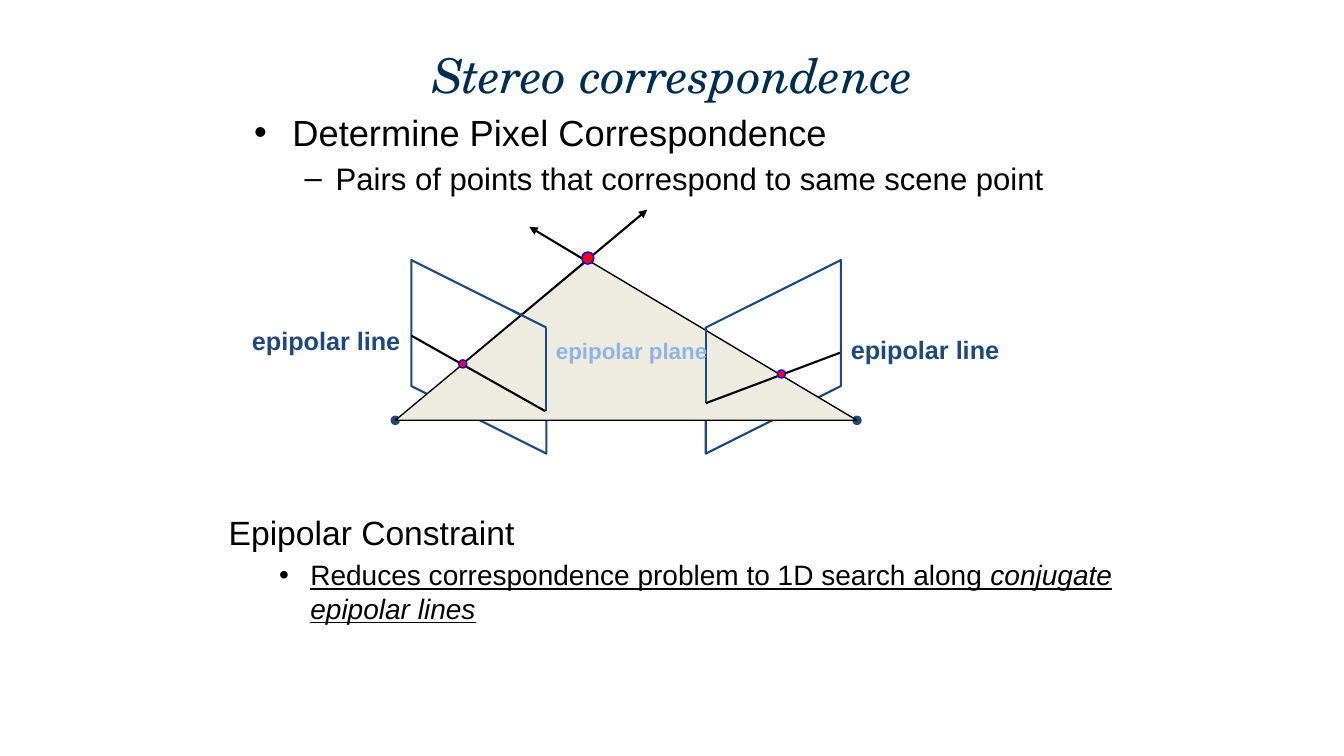
from lxml import etree
from pptx import Presentation
from pptx.dml.color import RGBColor
from pptx.enum.shapes import MSO_CONNECTOR, MSO_SHAPE
from pptx.enum.text import MSO_ANCHOR, MSO_AUTO_SIZE, PP_ALIGN
from pptx.oxml.ns import qn
from pptx.util import Inches, Pt

COLORS = {
    "title": "002D50", "ink": "000000", "navy": "1F497D", "sand": "EEECE1",
    "sky": "8EB4E3", "red": "FF0000", "blue": "0000FF",
}


def rgb(name):
    return RGBColor.from_string(COLORS[name])


class StereoSlide:
    body_font = "Arial"
    title_font = "TeX Gyre Schola"

    def __init__(self, slide):
        self.slide = slide
        self.shapes = slide.shapes

    def place(self, shape, left, top, width, height):
        shape.left, shape.top = Inches(left), Inches(top)
        shape.width, shape.height = Inches(width), Inches(height)

    def style_font(self, font, size, color, name=body_font):
        font.name, font.size = name, Pt(size)
        font.color.rgb = rgb(color)

    def title(self, text, box):
        heading = self.shapes.title
        self.place(heading, *box)
        frame = heading.text_frame
        frame.text = text
        frame.auto_size = MSO_AUTO_SIZE.NONE
        frame.vertical_anchor = MSO_ANCHOR.MIDDLE
        line = frame.paragraphs[0]
        line.alignment = PP_ALIGN.CENTER
        font = line.runs[0].font
        self.style_font(font, 34.2, "title", self.title_font)
        font.italic = True

    def outline(self, holder, box, items):
        """Fill holder with two levels of (text, size, bullet) items."""
        self.place(holder, *box)
        frame = holder.text_frame
        frame.word_wrap = True
        frame.auto_size = MSO_AUTO_SIZE.NONE
        frame.text = "\n".join(text for text, _, _ in items)
        indents = [(0.38, -0.38), (0.81, -0.31)]
        for level, (line, (_, size, bullet)) in enumerate(zip(frame.paragraphs, items)):
            line.level = level
            line.space_before = Pt(round(0.2 * size, 1) if level else 0)
            margin, hanging = indents[level]
            props = line._p.get_or_add_pPr()
            props.set("marL", str(Inches(margin)))
            props.set("indent", str(Inches(hanging)))
            if bullet:
                etree.SubElement(props, qn("a:buFont")).set("typeface", self.body_font)
                etree.SubElement(props, qn("a:buChar")).set("char", bullet)
            else:
                etree.SubElement(props, qn("a:buNone"))
            self.style_font(line.runs[0].font, size, "ink")
        return frame.paragraphs

    def text_box(self):
        return self.shapes.add_textbox(0, 0, 0, 0)

    def label(self, text, box, size, color):
        caption = self.text_box()
        self.place(caption, *box)
        frame = caption.text_frame
        frame.text = text
        frame.word_wrap = False
        frame.vertical_anchor = MSO_ANCHOR.MIDDLE
        line = frame.paragraphs[0]
        line.alignment = PP_ALIGN.CENTER
        font = line.runs[0].font
        self.style_font(font, size, color)
        font.bold = True

    def paint(self, shape, fill, line, width):
        shape.shadow.inherit = False
        if fill:
            shape.fill.solid()
            shape.fill.fore_color.rgb = rgb(fill)
        else:
            shape.fill.background()
        shape.line.color.rgb = rgb(line)
        shape.line.width = Pt(width)

    def polygon(self, corners, line, width, fill=None):
        points = [(Inches(x), Inches(y)) for x, y in corners]
        builder = self.shapes.build_freeform(*points[0])
        builder.add_line_segments(points[1:], close=True)
        self.paint(builder.convert_to_shape(), fill, line, width)

    def dot(self, center, size, fill, line):
        x, y = center
        spot = self.shapes.add_shape(
            MSO_SHAPE.OVAL, Inches(x - size / 2), Inches(y - size / 2),
            Inches(size), Inches(size))
        self.paint(spot, fill, line, 1)

    def line(self, start, end, color="ink", arrow=False):
        ray = self.shapes.add_connector(
            MSO_CONNECTOR.STRAIGHT, *(Inches(v) for v in (*start, *end)))
        ray.line.color.rgb = rgb(color)
        ray.line.width = Pt(1.5)
        if arrow:
            etree.SubElement(ray.line._ln, qn("a:tailEnd")).set("type", "triangle")
        etree.SubElement(ray._element.spPr, qn("a:effectLst"))


def main():
    deck = Presentation()
    deck.slide_width, deck.slide_height = Inches(13.33), Inches(7.5)
    stereo = StereoSlide(deck.slides.add_slide(deck.slide_layouts[1]))

    stereo.title("Stereo correspondence", (0.67, 0.38, 12, 0.72))
    stereo.outline(stereo.slide.placeholders[1], (2.42, 1.04, 8.5, 1.15), [
        ("Determine Pixel Correspondence", 25.9, "•"),
        ("Pairs of points that correspond to same scene point", 22.2, "–"),
    ])

    scene_point = (5.83, 2.58)
    left_camera, right_camera = (3.92, 4.17), (8.5, 4.17)
    left_plane = [(4.08, 2.58), (4.08, 3.83), (5.42, 4.5), (5.42, 3.25)]
    right_plane = [(12.42 - x, y) for x, y in left_plane]

    stereo.line((7.75, 3.75), (5.25, 2.25), arrow=True)
    for plane in (left_plane, right_plane):
        stereo.polygon(plane, "navy", 1.5)
    stereo.line((4.58, 3.62), (6.42, 2.08), arrow=True)
    for camera in (left_camera, right_camera):
        stereo.dot(camera, 0.08, "navy", "navy")

    constraint = stereo.outline(stereo.text_box(), (2.17, 5.03, 9, 2.05), [
        ("Epipolar Constraint", 24, None),
        ("Reduces correspondence problem to 1D search along ", 20, "•"),
    ])[1]
    conjugate = constraint.add_run()
    conjugate.text = "conjugate epipolar lines"
    stereo.style_font(conjugate.font, 20, "ink")
    conjugate.font.italic = True
    for run in constraint.runs:
        run.font.underline = True

    stereo.polygon([left_camera, right_camera, scene_point], "ink", 1, "sand")
    for start, end in [((7, 3.25), (7, 4)), ((5.42, 3.25), (5.42, 4.08)),
                       ((5.42, 3.25), (5.08, 3.08))]:
        stereo.line(start, end, "navy")
    stereo.label("epipolar plane", (5.41, 3.29, 1.71, 0.37), 16, "sky")

    for start, end, label_left, label_top in [
            ((7, 4), (8.33, 3.5), 8.34, 3.27),
            ((5.41, 4.08), (4.08, 3.33), 2.4, 3.18)]:
        stereo.line(start, end)
        stereo.label("epipolar line", (label_left, label_top, 1.67, 0.4), 18, "navy")

    for center, size in [((7.75, 3.71), 0.08), ((4.59, 3.61), 0.08),
                         ((5.83, 2.56), 0.12)]:
        stereo.dot(center, size, "red", "blue")

    deck.save("out.pptx")


if __name__ == "__main__":
    main()
